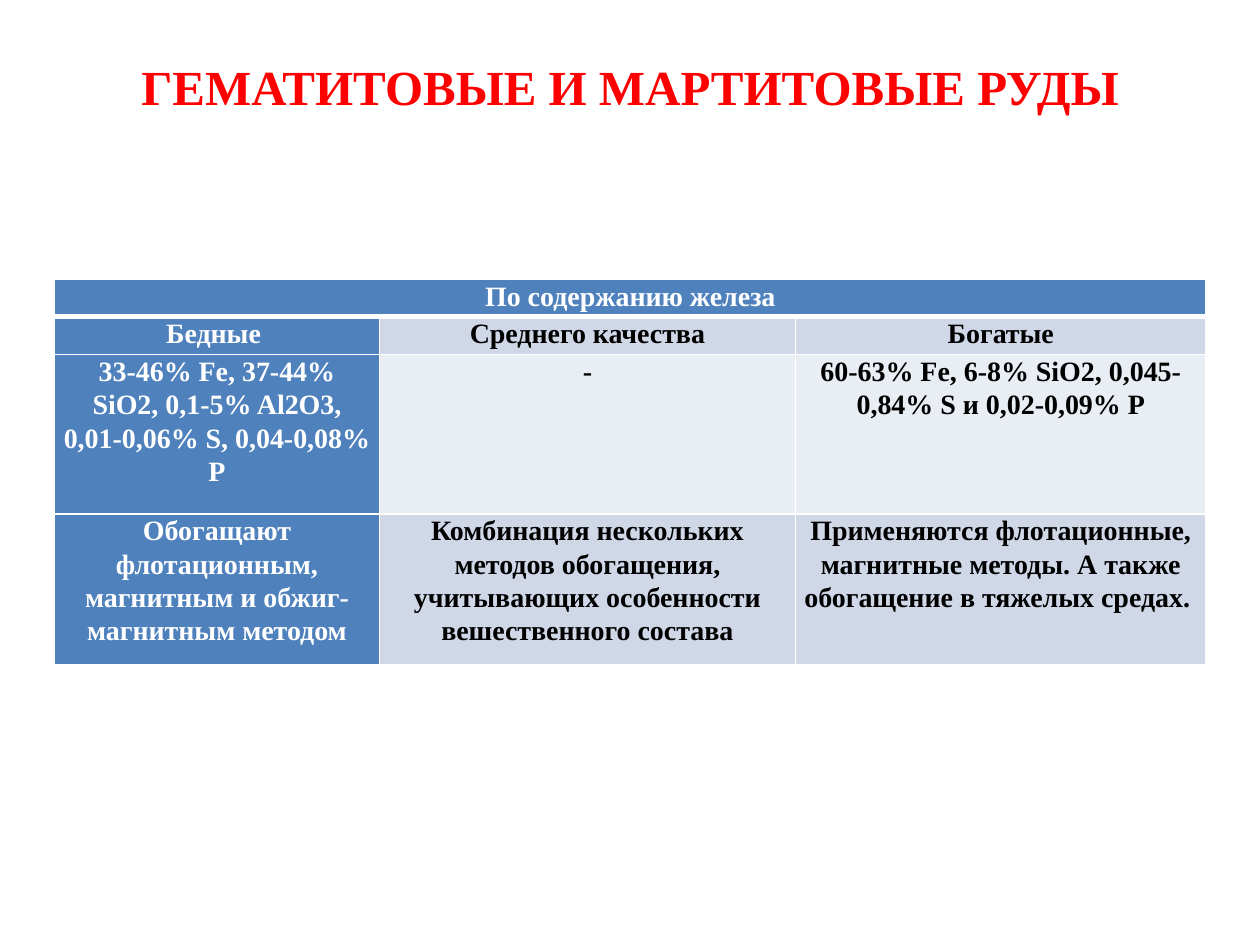
from dataclasses import dataclass

from lxml import etree
from pptx import Presentation, util as u
from pptx.dml.color import RGBColor
from pptx.enum import text
from pptx.oxml import ns


@dataclass(frozen=True)
class Theme:
    font: str = "Times New Roman"
    big: int = 28
    body: int = 16
    red: str = "FF0000"
    blue: str = "4F81BD"
    band: str = "D0D8E8"
    pale: str = "E9EDF4"
    white: str = "FFFFFF"
    black: str = "000000"


class Maker:
    def __init__(self, slide, theme):
        self.slide, self.theme = slide, theme

    def add_text(self, para, words, size, color):
        para.alignment = text.PP_ALIGN.CENTER
        run = para.add_run()
        run.text = words
        font = run.font
        font.name, font.size, font.bold = self.theme.font, u.Pt(size), True
        font.color.rgb = RGBColor.from_string(color)

    def title(self, words, left, top, width, height):
        box = self.slide.shapes.title
        box.left, box.top = u.Pt(left), u.Pt(top)
        box.width, box.height = u.Pt(width), u.Pt(height)
        frame = box.text_frame
        frame.word_wrap = True
        frame.vertical_anchor = text.MSO_ANCHOR.MIDDLE
        self.add_text(frame.paragraphs[0], words, self.theme.big, self.theme.red)

    def border(self, cell, base):
        props = cell._tc.get_or_add_tcPr()
        for side, width in (("L", 1), ("R", 1), ("T", 1), ("B", base)):
            line = etree.SubElement(props, ns.qn("a:ln" + side), w=str(u.Pt(width)))
            fill = etree.SubElement(line, ns.qn("a:solidFill"))
            etree.SubElement(fill, ns.qn("a:srgbClr"), val=self.theme.white)

    def cell(self, cell, words, fill, color, base):
        cell.margin_left = cell.margin_right = u.Pt(5)
        cell.margin_top = cell.margin_bottom = 0
        self.border(cell, base)
        cell.fill.solid()
        cell.fill.fore_color.rgb = RGBColor.from_string(fill)
        if words:
            para = cell.text_frame.paragraphs[0]
            para.line_spacing, para.space_after = 1.07, u.Pt(8)
            self.add_text(para, words, self.theme.body, color)

    def table(self, rows, left, top, widths, heights):
        t = self.theme
        grid = self.slide.shapes.add_table(
            len(rows), len(widths), u.Pt(left), u.Pt(top),
            u.Pt(sum(widths)), u.Pt(sum(heights))).table
        for col, width in zip(grid.columns, widths):
            col.width = u.Pt(width)
        for row, height in zip(grid.rows, heights):
            row.height = u.Pt(height)
        # The heading spans the full width
        grid.cell(0, 0).merge(grid.cell(0, len(widths) - 1))
        # Heading row and first column are blue, the rest is banded
        for r, row in enumerate(rows):
            for c, words in enumerate(row):
                head = r == 0 or c == 0
                fill = t.blue if head else t.band if r % 2 else t.pale
                color = t.white if head else t.black
                self.cell(grid.cell(r, c), words, fill, color, 1 if r else 3)


ROWS = [
    ("По содержанию железа", "", ""),
    ("Бедные ", "Среднего качества", "Богатые"),
    ("33-46% Fe, 37-44% SiO2, 0,1-5% Al2O3, 0,01-0,06% S, 0,04-0,08% P",
     "-",
     "60-63% Fe, 6-8% SiO2, 0,045-0,84% S и 0,02-0,09% P"),
    ("Обогащают флотационным, магнитным и обжиг-магнитным методом",
     "Комбинация нескольких методов обогащения, учитывающих особенности "
     "вешественного состава",
     "Применяются флотационные, магнитные методы. А также обогащение "
     "в тяжелых средах. "),
]


def main():
    deck = Presentation()
    deck.slide_width, deck.slide_height = u.Pt(720), u.Pt(540)
    slide = deck.slides.add_slide(deck.slide_layouts[5])
    make = Maker(slide, Theme())
    # Title
    make.title("ГЕМАТИТОВЫЕ И МАРТИТОВЫЕ РУДЫ", 36, 21.6, 648, 55.4)
    # Ore table
    make.table(ROWS, 31.2, 159.4, (185.6, 237.8, 234.6), (21.6, 21.6, 91, 86.4))
    deck.save("out.pptx")


if __name__ == "__main__":
    main()
